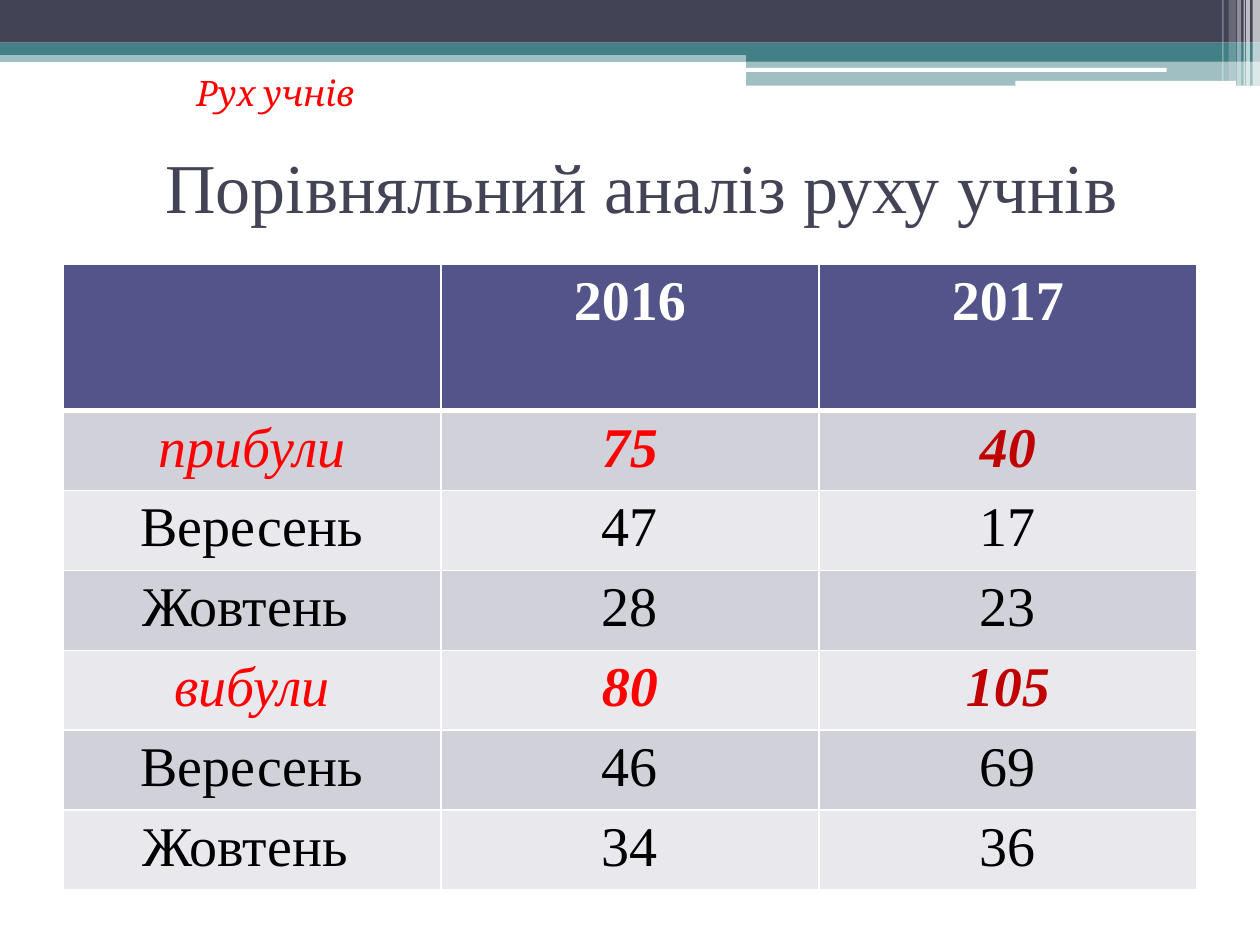
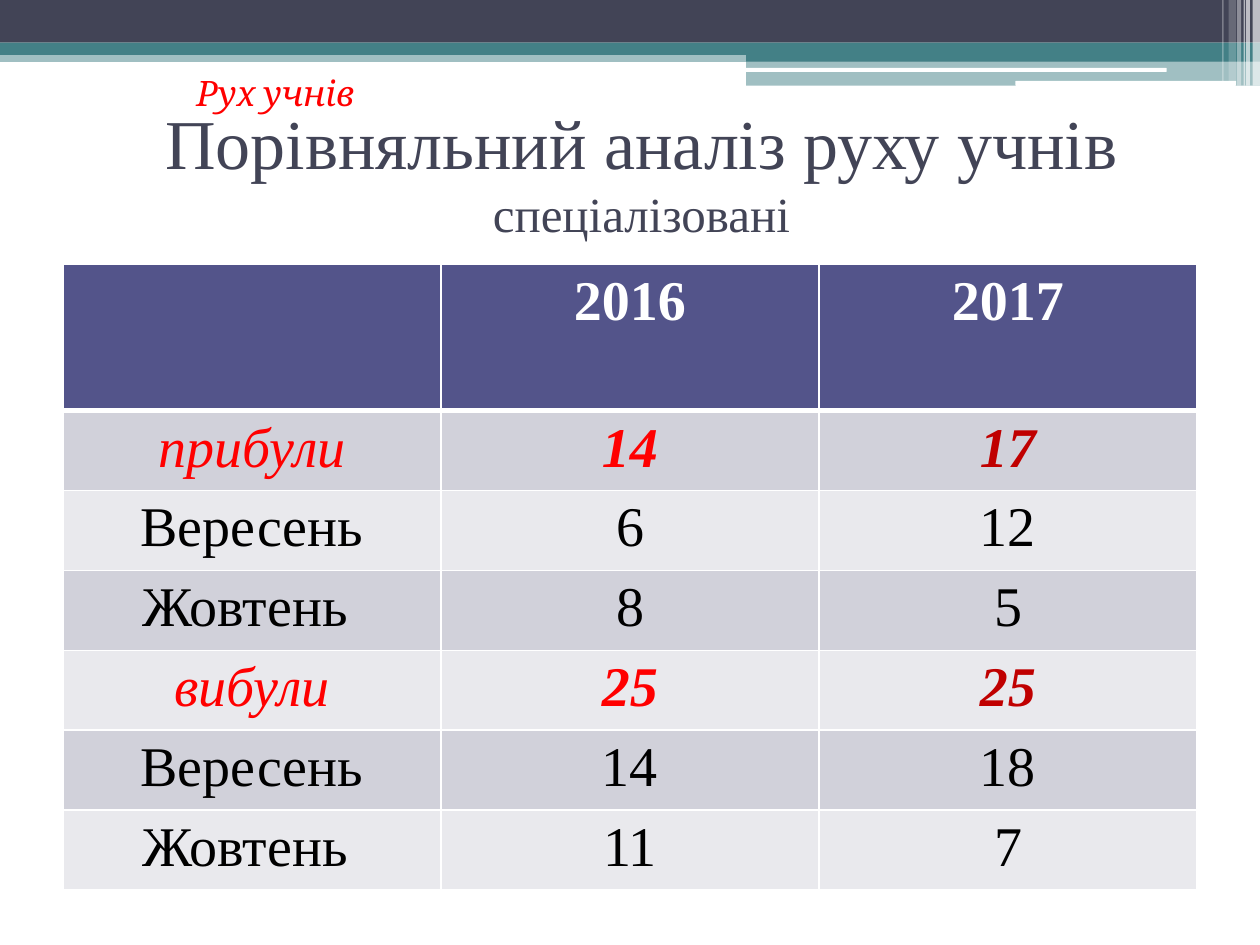
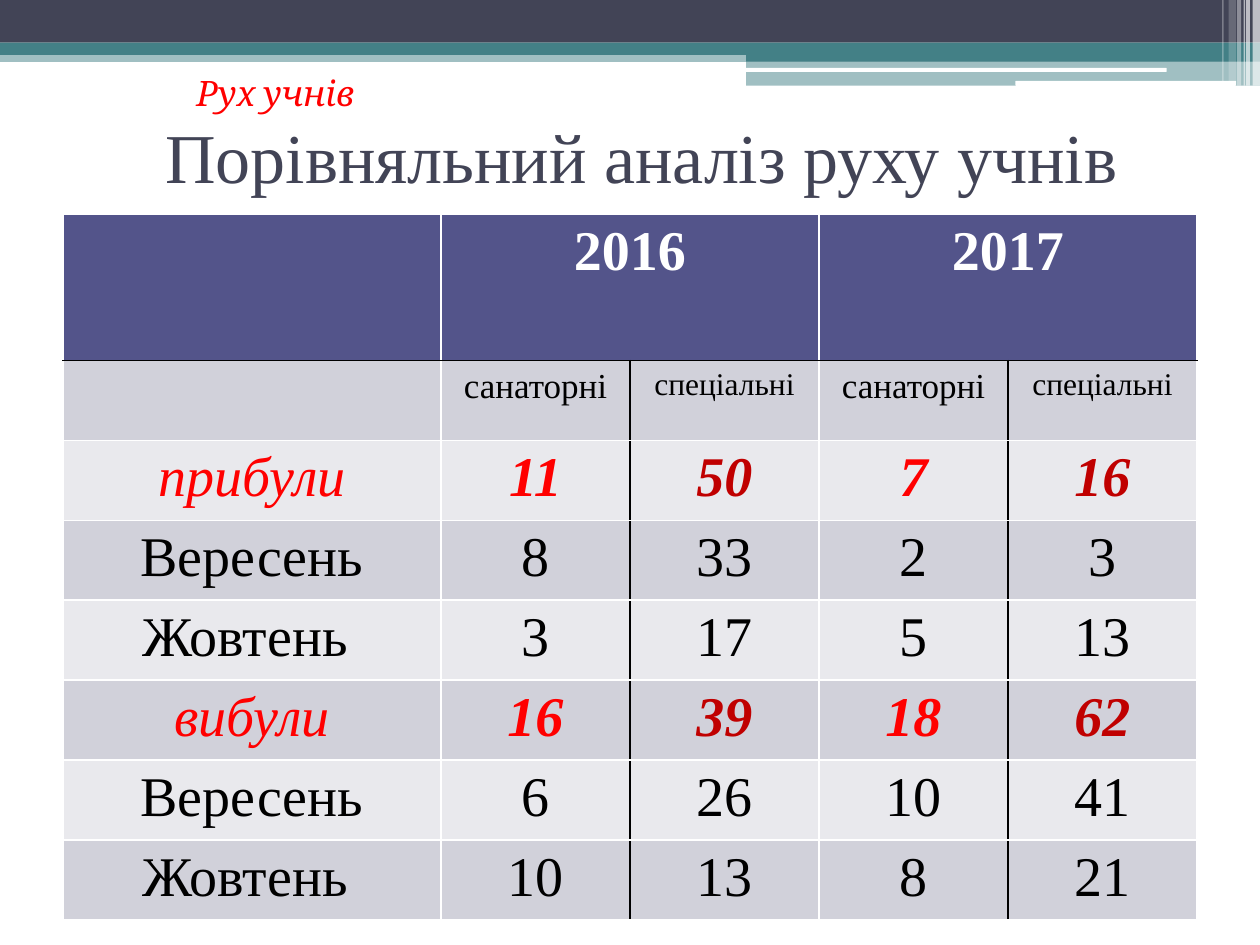
"""Build three slides comparing pupil movement in 2016 and 2017."""
from lxml import etree
from pptx import Presentation
from pptx.dml.color import RGBColor
from pptx.enum.shapes import MSO_SHAPE
from pptx.enum.text import MSO_ANCHOR, MSO_AUTO_SIZE, PP_ALIGN
from pptx.oxml.ns import qn
from pptx.util import Cm, Pt

RECT, ROUND = MSO_SHAPE.RECTANGLE, MSO_SHAPE.ROUNDED_RECTANGLE
CENTER, LEFT = PP_ALIGN.CENTER, PP_ALIGN.LEFT
MIDDLE = MSO_ANCHOR.MIDDLE
NO_FIT = MSO_AUTO_SIZE.NONE

COLORS = {
    "ink": "424456", "teal": "438086", "white": "FFFFFF", "black": "000000",
    "red": "FF0000", "dark_red": "C00000",
    "header": "53548A", "odd": "D1D1DA", "even": "E9E9ED",
}
BANDS = [
    (RECT, 0, 1.02, 25.4, 0.23, "teal", 50),
    (RECT, 0, 0, 25.4, 0.86, "ink", 100),
    (RECT, 0, 0.86, 25.4, 0.25, "teal", 100),
    (RECT, 15.04, 0.99, 10.36, 0.25, "teal", 100),
    (RECT, 15.04, 1.22, 10.36, 0.51, "teal", 50),
    (ROUND, 15.01, 1.37, 8.51, 0.08, "white", 100),
    (ROUND, 20.47, 1.63, 4.45, 0.1, "white", 100),
    (RECT, 25.25, 0, 0.15, 1.73, "white", 65),
    (RECT, 25.12, 0, 0.08, 1.73, "white", 65),
    (RECT, 25.07, 0, 0.03, 1.73, "white", 60),
    (RECT, 24.94, 0, 0.08, 1.73, "white", 40),
    (RECT, 24.77, 0, 0.15, 1.63, "white", 20),
    (RECT, 24.64, 0, 0.03, 1.63, "white", 30),
]
TITLE = "Порівняльний аналіз руху учнів"
TOTALS = ("прибули", "вибули")
LABELS = ["прибули", "Вересень", "Жовтень ", "вибули", "Вересень", "Жовтень "]
HEADER_HEIGHT, ROW_HEIGHT = 2.95, 1.61
SLIDES = [
    {"title": [(TITLE, 40)], "title_top": 2.34, "title_height": 2.79,
     "table_top": 5.33, "widths": [7.62] * 3, "head": [["", "2016", "2017"]],
     "data": [(75, 40), (47, 17), (28, 23), (80, 105), (46, 69), (34, 36)]},
    {"title": [(TITLE + " ", 40), ("спеціалізовані", 28)],
     "title_top": 2.34, "title_height": 2.21,
     "table_top": 5.33, "widths": [7.62] * 3, "head": [["", "2016", "2017"]],
     "data": [(14, 17), (6, 12), (8, 5), (25, 25), (14, 18), (11, 7)]},
    {"title": [(TITLE, 40)], "title_top": 2.13, "title_height": 2.01,
     "table_top": 4.32, "widths": [7.62] + [3.81] * 4,
     "head": [["", "2016", "", "2017", ""],
              ["", "санаторні", "спеціальні", "санаторні", "спеціальні"]],
     "data": [(11, 50, 7, 16), (8, 33, 2, 3), (3, 17, 5, 13),
              (16, 39, 18, 62), (6, 26, 10, 41), (10, 13, 8, 21)]},
]


def add_text(p, text, size=32, font="Times New Roman", color="black",
             bold=False, italic=False, align=CENTER):
    p.alignment = align
    r = p.add_run()
    r.text = text
    r.font.size, r.font.name = Pt(size), font
    r.font.bold, r.font.italic = bold, italic
    r.font.color.rgb = RGBColor.from_string(COLORS[color])


def add_border(tc_pr, index, side, color, width):
    ln = etree.Element(qn(f"a:ln{side}"), w=str(Pt(width)))
    fill = etree.SubElement(ln, qn("a:solidFill"))
    etree.SubElement(fill, qn("a:srgbClr"), val=COLORS[color])
    tc_pr.insert(index, ln)


prs = Presentation()
prs.slide_width, prs.slide_height = Cm(25.4), Cm(19.05)
layout = prs.slide_layouts[5]

for number, content in enumerate(SLIDES):
    s = prs.slides.add_slide(layout)
    if number == 0:
        for kind, x, y, w, h, color, alpha in BANDS:
            sp = s.shapes.add_shape(kind, Cm(x), Cm(y), Cm(w), Cm(h))
            sp.shadow.inherit = False
            sp.fill.solid()
            sp.fill.fore_color.rgb = RGBColor.from_string(COLORS[color])
            sp.line.fill.background()
            if alpha < 100:
                clr = sp.element.find(".//" + qn("a:srgbClr"))
                etree.SubElement(clr, qn("a:alpha"), val=str(alpha * 1000))
            layout.shapes.element.append(sp.element)

    title = s.shapes.title
    title.left, title.top = Cm(1.5), Cm(content["title_top"])
    title.width, title.height = Cm(22.86), Cm(content["title_height"])
    tf = title.text_frame
    tf.auto_size, tf.vertical_anchor = NO_FIT, MIDDLE
    for text, size in content["title"]:
        add_text(tf.paragraphs[0], text, size=size, color="ink")

    tf = s.shapes.add_textbox(Cm(3.71), Cm(1.32), Cm(18.01), Cm(1.12)).text_frame
    tf.word_wrap = True
    add_text(tf.paragraphs[0], "Рух учнів", size=20, font="Cambria",
             color="red", italic=True, align=LEFT)

    widths, head = content["widths"], content["head"]
    rows = head + [[label, *map(str, values)]
                   for label, values in zip(LABELS, content["data"])]
    split = len(head) == 2
    table = s.shapes.add_table(
        len(rows), len(widths), Cm(1.27), Cm(content["table_top"]), Cm(sum(widths)),
        Cm(HEADER_HEIGHT + ROW_HEIGHT * (len(rows) - 1))).table
    table.first_row = table.horz_banding = False
    for col, width in zip(table.columns, widths):
        col.width = Cm(width)

    for i, row in enumerate(rows):
        table.rows[i].height = Cm(ROW_HEIGHT if i else HEADER_HEIGHT)
        total = row[0] in TOTALS
        for j, text in enumerate(row):
            cell = table.cell(i, j)
            cell.fill.solid()
            shade = "header" if i == 0 else "odd" if i % 2 else "even"
            cell.fill.fore_color.rgb = RGBColor.from_string(COLORS[shade])

            inner = split and i > 0 and j > 0
            rule = ("black", 1) if split else ("white", 3)
            borders = {
                "L": ("black" if inner and j % 2 == 0 else "white", 1),
                "R": ("black" if inner and j % 2 else "white", 1),
                "T": rule if i == 1 else ("white", 1),
                "B": rule if i == 0 else ("white", 1),
            }
            if j == len(row) - 1:
                borders["R"] = ("white", 1)
            tc_pr = cell.fill.fore_color and cell._tc.get_or_add_tcPr()
            for index, (side, (color, width)) in enumerate(borders.items()):
                add_border(tc_pr, index, side, color, width)

            p = cell.text_frame.paragraphs[0]
            if not text:
                continue
            if i == 0:
                add_text(p, text, color="white", bold=True)
            elif i < len(head):
                add_text(p, text, size=20 if j % 2 else 18)
            elif total:
                color = "dark_red" if j and j % 2 == 0 else "red"
                add_text(p, text, color=color, bold=j > 0, italic=True)
            else:
                add_text(p, text)

    if split:
        for j in (1, 3):
            table.cell(0, j).merge(table.cell(0, j + 1))

prs.save("out.pptx")
